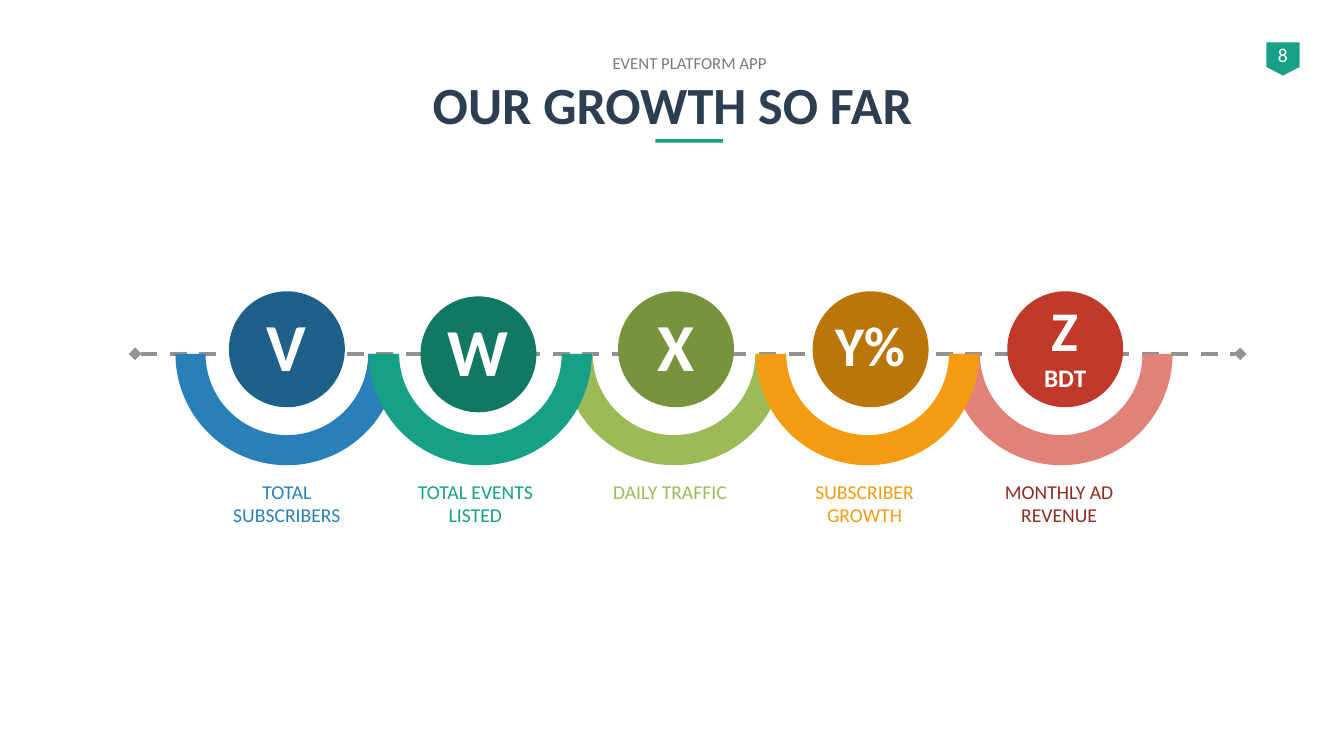
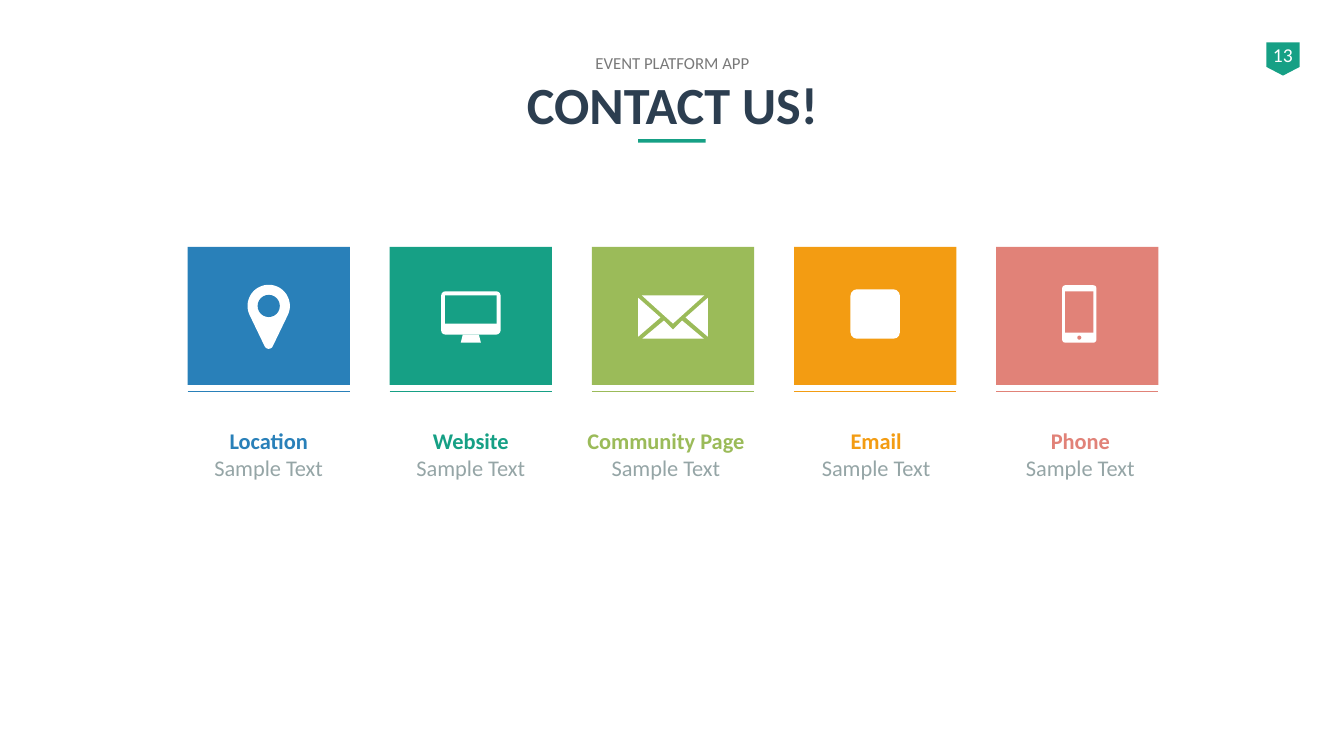
from math import cos, radians, sin

from lxml import etree
from pptx import Presentation
from pptx.dml.color import RGBColor
from pptx.enum.dml import MSO_LINE
from pptx.enum.shapes import MSO_CONNECTOR, MSO_SHAPE
from pptx.enum.text import MSO_ANCHOR, MSO_AUTO_SIZE, PP_ALIGN
from pptx.oxml.ns import qn
from pptx.util import Inches, Pt

RECT, ROUND, OVAL = MSO_SHAPE.RECTANGLE, MSO_SHAPE.ROUNDED_RECTANGLE, MSO_SHAPE.OVAL
ARC, TAG, STAND = MSO_SHAPE.BLOCK_ARC, MSO_SHAPE.PENTAGON, MSO_SHAPE.TRAPEZOID
STRAIGHT, DASH = MSO_CONNECTOR.STRAIGHT, MSO_LINE.DASH
TOP, MIDDLE, CENTER = MSO_ANCHOR.TOP, MSO_ANCHOR.MIDDLE, PP_ALIGN.CENTER
NO_FIT = MSO_AUTO_SIZE.NONE

FONT = "Calibri"
WHITE, NAVY, GREY, SILVER, DASH_GREY = "FFFFFF", "2C3E50", "797979", "95A5A6", "929292"
BLUE, TEAL, GREEN, ORANGE, CORAL = "2980B9", "16A085", "9BBB59", "F39C12", "E18278"

CELL = Inches(0.1)  # every length below is in columns and rows of this grid


def rgb(value):
    return RGBColor.from_string(value)


def cells(*values):
    return [round(v * CELL) for v in values]


def arc_points(cx, cy, r, start, end, step=6):
    """Points of an arc; angles run clockwise from three o'clock."""
    return [(cx + r * cos(radians(a)), cy + r * sin(radians(a)))
            for a in range(start, end + 1, step)]


class Deck:
    """Shared style, and the slide being drawn."""

    def __init__(self):
        self.prs = Presentation()
        self.prs.slide_width, self.prs.slide_height = Inches(13.33), Inches(7.5)
        self.s = None

    def slide(self, title, number, shift=0):
        """Start a slide; shift moves the kicker and rule off centre."""
        self.s = self.prs.slides.add_slide(self.prs.slide_layouts[5])
        sp = self.s.shapes.title
        sp.left, sp.top, sp.width, sp.height = cells(6.7, 6.6, 120, 7.3)
        self.set_text(sp, [(title, 37.3, NAVY, True)], MIDDLE)
        self.text(6.7 + shift, 4.7, 120, 3, [("EVENT PLATFORM APP", 12, GREY, False)])
        self.shape(RECT, 63.3 + shift, 13.8, 6.7, 0.35, TEAL)
        # Page tag
        self.shape(TAG, 125.6, 4.2, 3.3, 3.3, TEAL, adj={0: 0.26}, turn=90)
        self.text(125.1, 3.8, 4.3, 3.4, [(number, 14, WHITE, False)], wrap=False)

    def set_text(self, sp, lines, anchor=TOP, wrap=True):
        """Fill a shape with (text, size, colour, bold) paragraphs."""
        tf = sp.text_frame
        tf.word_wrap, tf.auto_size, tf.vertical_anchor = wrap, NO_FIT, anchor
        for i, (text, size, color, bold) in enumerate(lines):
            p = tf.paragraphs[0] if i == 0 else tf.add_paragraph()
            p.text, p.alignment = text, CENTER
            p.font.name, p.font.size, p.font.bold = FONT, Pt(size), bold
            p.font.color.rgb = rgb(color)
        return tf

    def text(self, x, y, w, h, lines, wrap=True):
        sp = self.s.shapes.add_textbox(*cells(x, y, w, h))
        self.set_text(sp, lines, wrap=wrap)

    def paint(self, sp, fill):
        sp.shadow.inherit = False
        sp.fill.solid()
        sp.fill.fore_color.rgb = rgb(fill)
        sp.line.fill.background()
        return sp

    def shape(self, kind, x, y, w, h, fill, adj=None, turn=0):
        sp = self.s.shapes.add_shape(kind, *cells(x, y, w, h))
        for i, value in (adj or {}).items():
            sp.adjustments[i] = value
        sp.rotation = turn
        return self.paint(sp, fill)

    def polygon(self, points, fill):
        first, *rest = [cells(*pt) for pt in points]
        builder = self.s.shapes.build_freeform(*first)
        builder.add_line_segments(rest, close=True)
        return self.paint(builder.convert_to_shape(), fill)

    def line(self, x1, x2, y, color, width, dash=None, ends=None):
        c = self.s.shapes.add_connector(STRAIGHT, *cells(x1, y, x2, y))
        c.line.color.rgb, c.line.width = rgb(color), Pt(width)
        if dash:
            c.line.dash_style = dash
        spPr = c.element.spPr
        if ends:
            for tag in ("a:headEnd", "a:tailEnd"):
                etree.SubElement(spPr.find(qn("a:ln")), qn(tag), type=ends)
        etree.SubElement(spPr, qn("a:effectLst"))


# Icons, each drawn around the centre (cx, cy) of a tile of the given colour

def pin(deck, cx, cy, tile):
    head = arc_points(cx, cy - 1.05, 2.1, 156, 384)
    tip = arc_points(cx, cy + 2.75, 0.45, 24, 156)
    deck.polygon(head + tip, WHITE)
    deck.shape(OVAL, cx - 1.1, cy - 2.15, 2.2, 2.2, tile)


def monitor(deck, cx, cy, tile):
    deck.shape(ROUND, cx - 2.95, cy - 2.5, 5.9, 4.3, WHITE, adj={0: 0.1})
    deck.shape(RECT, cx - 2.55, cy - 2.1, 5.1, 2.8, tile)
    deck.shape(STAND, cx - 1, cy + 1.8, 2, 0.8, WHITE)


def envelope(deck, cx, cy, tile):
    deck.polygon([(cx - 3.1, cy - 2.1), (cx + 3.1, cy - 2.1), (cx, cy + 0.7)], WHITE)
    for side in (-1, 1):
        deck.polygon([(cx + side * 3.45, cy - 1.85), (cx + side * 1.25, cy + 0.1),
                      (cx + side * 3.45, cy + 2)], WHITE)
    deck.polygon([(cx - 3.05, cy + 2.2), (cx - 0.9, cy + 0.4), (cx, cy + 1.3),
                  (cx + 0.9, cy + 0.4), (cx + 3.05, cy + 2.2)], WHITE)


def badge(deck, cx, cy, tile):
    deck.shape(ROUND, cx - 2.45, cy - 2.7, 4.9, 4.9, WHITE, adj={0: 0.13})


def phone(deck, cx, cy, tile):
    left = cx - 1.5
    deck.shape(ROUND, left, cy - 3.1, 3.4, 5.7, WHITE, adj={0: 0.09})
    deck.shape(RECT, left + 0.3, cy - 2.5, 2.8, 4.1, tile)
    deck.shape(OVAL, left + 1.5, cy + 1.9, 0.4, 0.4, tile)


def growth_slide(deck):
    deck.slide("OUR GROWTH SO FAR", "8", shift=1.7)
    deck.line(13.4, 123, 35.1, DASH_GREY, 3, DASH, "diamond")

    # Half rings, overlapping in this order
    ring_colors = [BLUE, TEAL, GREEN, ORANGE, CORAL]
    for i in (2, 0, 1, 4, 3):
        deck.shape(ARC, 17.4 + 19.2 * i, 24.05, 22.1, 22.1, ring_colors[i],
                   adj={2: 0.135}, turn=180)

    # Discs and captions: lines, disc colour, caption, caption colour,
    # then small shifts of disc (right, down) and caption (right)
    stops = [
        ([("V", 48)], "1F608B", "TOTAL SUBSCRIBERS", BLUE, 0, 0, 0.6),
        ([("W", 48)], "107864", "TOTAL EVENTS LISTED", TEAL, -0.3, 0.5, 0),
        ([("X", 48)], "77933C", "DAILY TRAFFIC", GREEN, 0, 0, 0),
        ([("Y%", 40)], "BA7609", "SUBSCRIBER GROWTH", ORANGE, 0, 0, 0),
        ([("Z", 40), ("BDT", 18)], "C0392B", "MONTHLY AD REVENUE", "902B20", 0, 0, 0),
    ]
    for i, (lines, fill, caption, color, dx, dy, caption_dx) in enumerate(stops):
        x = 19.3 * i
        disc = deck.shape(OVAL, 22.7 + x + dx, 28.9 + dy, 11.5, 11.5, fill)
        tf = deck.set_text(disc, [(t, size, WHITE, True) for t, size in lines],
                           MIDDLE, wrap=False)
        tf.margin_left = tf.margin_right = tf.margin_top = 0
        tf.margin_bottom = CELL
        deck.text(19.9 + x + caption_dx, 47.1, 15.9, 5.7, [(caption, 14, color, False)])


def contact_slide(deck):
    deck.slide("CONTACT US!", "13")
    # Label, colour, icon and a small shift of the label
    contacts = [
        ("Location", BLUE, pin, 0),
        ("Website", TEAL, monitor, 0),
        ("Community Page", GREEN, envelope, -0.7),
        ("Email", ORANGE, badge, 0.1),
        ("Phone", CORAL, phone, 0.3),
    ]
    left, width, pitch = 18.6, 16.1, 20.05
    for i, (label, color, icon, label_dx) in enumerate(contacts):
        x = left + pitch * i
        deck.shape(RECT, x, 24.5, width, 13.7, color)
        deck.line(x, x + width, 38.8, color, 0.75)
        icon(deck, x + width / 2, 31.4, color)
        deck.text(x - 3 + label_dx, 41.85, width + 6, 6.9,
                  [(label, 16, color, True), ("Sample Text", 16, SILVER, False)])


def main():
    deck = Deck()
    growth_slide(deck)
    contact_slide(deck)
    deck.prs.save("out.pptx")


if __name__ == "__main__":
    main()
